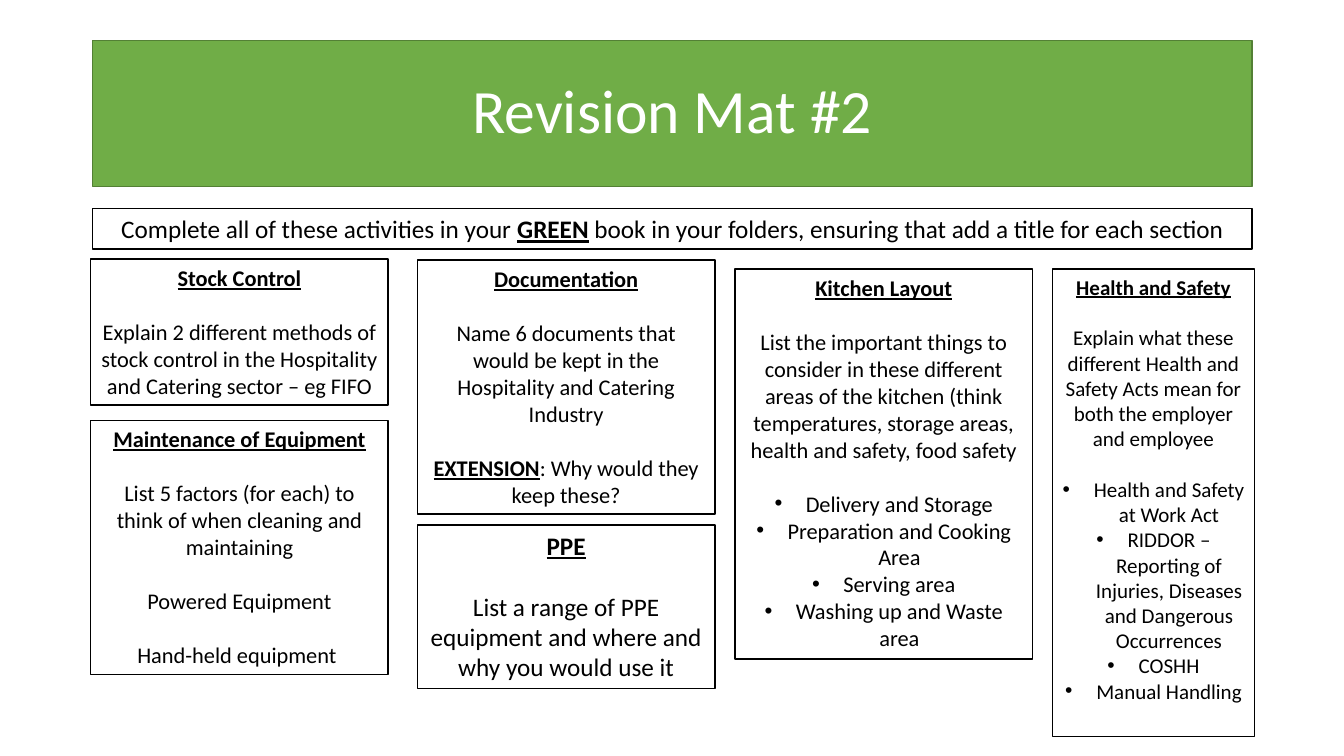
"""Build the "Revision Mat #2" slide: a title banner, an instruction bar and six task cards."""
from lxml import etree
from pptx import Presentation
from pptx.dml.color import RGBColor
from pptx.enum.shapes import MSO_SHAPE
from pptx.enum.text import MSO_ANCHOR, MSO_AUTO_SIZE, PP_ALIGN
from pptx.oxml.ns import qn
from pptx.util import Inches, Pt

RECT = MSO_SHAPE.RECTANGLE
MIDDLE, TOP = MSO_ANCHOR.MIDDLE, MSO_ANCHOR.TOP
NO_FIT, GROW = MSO_AUTO_SIZE.NONE, MSO_AUTO_SIZE.SHAPE_TO_FIT_TEXT
CENTER = PP_ALIGN.CENTER
GREEN = RGBColor(0x70, 0xAD, 0x47)
DARK_GREEN = RGBColor(0x53, 0x80, 0x35)
WHITE = RGBColor(255, 255, 255)
BLACK = RGBColor(0, 0, 0)
FONT = "Calibri"
LINE_HEIGHT = 1.22
BULLET_INDENT = 0.31

BANNER = {"left": 0.92, "width": 11.5}
TITLE = "Revision Mat #2"
INSTRUCTION = [
    ("Complete all of these activities in your ", False),
    ("GREEN", True),
    (" book in your folders, ensuring that add a title for each section", False),
]

CARDS = [
    {"at": (0.9, 2.57, 2.95, 1.45), "size": 16, "heading": "Stock Control",
     "body": ["Explain 2 different methods of stock control in the Hospitality "
              "and Catering sector – eg FIFO"]},
    {"at": (4.14, 2.58, 2.95, 2.52), "size": 16, "heading": "Documentation",
     "body": ["Name 6 documents that would be kept in the Hospitality and Catering Industry",
              [("EXTENSION", True), (": Why would they keep these?", False)]]},
    {"at": (7.29, 2.67, 2.95, 3.87), "size": 16, "heading": "Kitchen Layout",
     "body": ["List the important things to consider in these different areas of the kitchen "
              "(think temperatures, storage areas, health and safety, food safety"],
     "bullets": ["Delivery and Storage", "Preparation and Cooking Area",
                 "Serving area", "Washing up and Waste area"]},
    {"at": (0.9, 4.17, 2.95, 2.52), "size": 16, "heading": "Maintenance of Equipment",
     "body": ["List 5 factors (for each) to think of when cleaning and maintaining",
              "Powered Equipment", "Hand-held equipment "]},
    {"at": (10.44, 2.67, 2, 4.64), "size": 15, "heading": "Health and Safety",
     "body": ["Explain what these different Health and Safety Acts mean for both "
              "the employer and employee"],
     "bullets": ["Health and Safety at Work Act",
                 "RIDDOR – Reporting of Injuries, Diseases and Dangerous Occurrences",
                 "COSHH", "Manual Handling"]},
    {"at": (4.14, 5.21, 2.95, 1.62), "size": 18, "heading": "PPE",
     "body": ["List a range of PPE equipment and where and why you would use it"]},
]


def add_box(s, at, fill, line, anchor=TOP, fit=GROW):
    """Add a bordered rectangle and return its text frame."""
    sp = s.shapes.add_shape(RECT, *map(Inches, at))
    sp.shadow.inherit = False
    sp.fill.solid()
    sp.fill.fore_color.rgb = fill
    sp.line.color.rgb = line
    sp.line.width = Pt(1)
    tf = sp.text_frame
    for name, value in {"word_wrap": True, "auto_size": fit, "vertical_anchor": anchor}.items():
        setattr(tf, name, value)
    return tf


def add_text(p, runs, size, color=BLACK):
    """Write centred runs; a marked run is bold and underlined."""
    p.alignment = CENTER
    for text, marked in runs:
        r = p.add_run()
        r.text = text
        style = {"name": FONT, "size": Pt(size), "bold": marked, "underline": marked}
        for name, value in style.items():
            setattr(r.font, name, value)
        r.font.color.rgb = color


def add_bullet(p):
    """Give a paragraph a round bullet with a hanging indent."""
    pPr = p._p.get_or_add_pPr()
    pPr.set("marL", str(Inches(BULLET_INDENT)))
    pPr.set("indent", str(-Inches(BULLET_INDENT)))
    etree.SubElement(pPr, qn("a:buFont")).set("typeface", "Arial")
    etree.SubElement(pPr, qn("a:buChar")).set("char", "•")


def add_card(s, card):
    """Add a task card with a heading, spaced body paragraphs and optional bullets."""
    size = card["size"]
    tf = add_box(s, card["at"], WHITE, BLACK)
    add_text(tf.paragraphs[0], [(card["heading"], True)], size)
    gap = Pt(round(size * LINE_HEIGHT, 1))
    for body in card["body"]:
        p = tf.add_paragraph()
        p.space_before = gap
        add_text(p, [(body, False)] if isinstance(body, str) else body, size)
    for i, bullet in enumerate(card.get("bullets", [])):
        p = tf.add_paragraph()
        if i == 0:
            p.space_before = gap
        add_bullet(p)
        add_text(p, [(bullet, False)], size)


def main():
    """Lay out the slide and save it."""
    prs = Presentation()
    prs.slide_width, prs.slide_height = Inches(13.33), Inches(7.5)
    s = prs.slides.add_slide(prs.slide_layouts[6])
    left, width = BANNER["left"], BANNER["width"]

    tf = add_box(s, (left, 0.4, width, 1.45), GREEN, DARK_GREEN, MIDDLE, NO_FIT)
    tf.paragraphs[0].line_spacing = 0.9
    add_text(tf.paragraphs[0], [(TITLE, False)], 44, WHITE)

    tf = add_box(s, (left, 2.07, width, 0.4), WHITE, BLACK)
    add_text(tf.paragraphs[0], INSTRUCTION, 18)

    for card in CARDS:
        add_card(s, card)
    prs.save("out.pptx")


if __name__ == "__main__":
    main()
